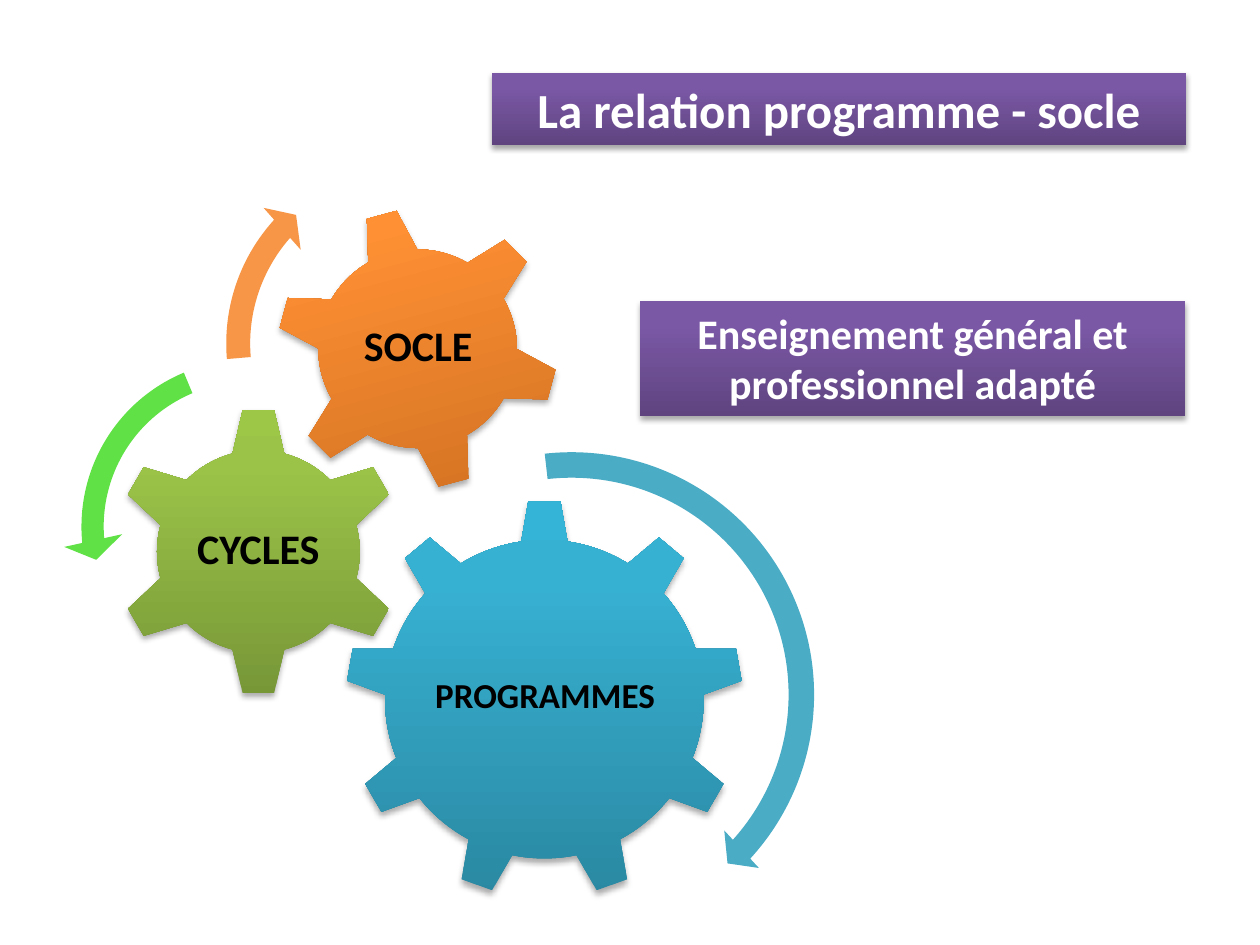
"""Build the slide that relates programmes, cycles and socle as meshing gears."""
from dataclasses import dataclass

from lxml.etree import SubElement
from pptx import Presentation
from pptx.dml.color import RGBColor
from pptx.enum.shapes import MSO_SHAPE as Preset
from pptx.enum.text import MSO_ANCHOR as Anchor, MSO_AUTO_SIZE as AutoSize, PP_ALIGN as Align
from pptx.oxml.ns import qn
from pptx.util import Cm, Pt

COLOURS = {
    "text": "000000", "title": "FFFFFF", "shadow": "000000",
    "blue": "4BACC6", "green": "60E146", "orange": "F79646",
}
GRADIENTS = {
    "blue": ("2A88A2", "37B1D2", "34B4D6"),
    "green": ("779737", "9BC348", "9DC746"),
    "orange": ("CC6E20", "FF9034", "FF9136"),
    "purple": ("5F4480", "7B58A6", "7C57A8"),
}
STOPS = (0, 80, 100)
LABEL_FRAME = {
    "word_wrap": True, "vertical_anchor": Anchor.MIDDLE,
    "margin_left": Cm(0.08), "margin_right": Cm(0.08),
    "margin_top": Cm(0.08), "margin_bottom": Cm(0.08),
}
BANNER_FRAME = {
    "word_wrap": True, "vertical_anchor": Anchor.TOP,
    "auto_size": AutoSize.SHAPE_TO_FIT_TEXT,
}


@dataclass(frozen=True)
class Shadow:
    opacity: int
    blur: float
    distance: float


@dataclass(frozen=True)
class Gear:
    preset: Preset
    colour: str
    left: float
    top: float
    side: float
    label: str
    size: int
    label_box: tuple[float, float, float, float]
    rotation: int = 0


@dataclass(frozen=True)
class Arrow:
    preset: Preset
    colour: str
    left: float
    top: float
    side: float
    bends: tuple[float, ...]


@dataclass(frozen=True)
class Banner:
    text: str
    size: int
    box: tuple[float, float, float, float]


GEAR_SHADOW = Shadow(32, 3.5, 2.2)
BANNER_SHADOW = Shadow(35, 3.1, 1.8)
GEARS = (
    Gear(Preset.GEAR_9, "blue", 6.96, 10.08, 8.03, "PROGRAMMES", 20, (8.59, 11.99, 4.8, 4.14)),
    Gear(Preset.GEAR_6, "green", 2.29, 8.2, 5.84, "CYCLES", 24, (3.76, 9.68, 2.9, 2.87)),
    Gear(Preset.GEAR_6, "orange", 5.56, 4.17, 5.72, "SOCLE", 24, (6.83, 5.41, 3.2, 3.2), 345),
)
ARROWS = (
    Arrow(Preset.CIRCULAR_ARROW, "blue", 6.38, 8.86, 10.29, (0.05, 2.99, 25.37, 158.18, 0.05)),
    Arrow(Preset.LEFT_CIRCULAR_ARROW, "green", 1.27, 6.88, 7.47, (0.06, 4.3, 104.89, 148.38, 0.08)),
    Arrow(Preset.CIRCULAR_ARROW, "orange", 4.24, 2.9, 8.05, (0.06, 3.94, 133.14, 105.08, 0.07)),
)
BANNERS = (
    Banner("La relation programme - socle", 28, (9.91, 1.47, 14, 1.45)),
    Banner("Enseignement général et professionnel adapté", 24, (12.9, 6.07, 11, 2.31)),
)


def set_values(target: object, values: dict) -> None:
    """Set each named attribute on the target."""
    for name, value in values.items():
        setattr(target, name, value)


def add_preset(shapes, preset: Preset, box: tuple):
    """Add a preset shape without line or shadow."""
    shape = shapes.add_shape(preset, *map(Cm, box))
    shape.line.fill.background()
    shape.shadow.inherit = False
    return shape


def add_relief(shape, gradient: str, shadow: Shadow) -> None:
    """Give a shape a vertical gradient and a shadow below."""
    properties = shape._element.spPr
    fill = SubElement(properties, qn("a:gradFill"), rotWithShape="1")
    properties.find(qn("a:prstGeom")).addnext(fill)
    stops = SubElement(fill, qn("a:gsLst"))
    for position, colour in zip(STOPS, GRADIENTS[gradient]):
        stop = SubElement(stops, qn("a:gs"), pos=str(position * 1000))
        SubElement(stop, qn("a:srgbClr"), val=colour)
    SubElement(fill, qn("a:lin"), ang="16200000", scaled="0")
    outer = SubElement(
        properties.find(qn("a:effectLst")), qn("a:outerShdw"),
        blurRad=str(Pt(shadow.blur)), dist=str(Pt(shadow.distance)),
        dir="5400000", rotWithShape="0",
    )
    tint = SubElement(outer, qn("a:srgbClr"), val=COLOURS["shadow"])
    SubElement(tint, qn("a:alpha"), val=str(shadow.opacity * 1000))


def write_text(box, text: str, size: int, colour: str, frame: dict):
    """Write one centred bold paragraph and return it."""
    set_values(box.text_frame, frame)
    para = box.text_frame.paragraphs[0]
    para.alignment = Align.CENTER
    span = para.add_run()
    span.text = text
    set_values(span.font, {"name": "Calibri", "size": Pt(size), "bold": True})
    span.font.color.rgb = RGBColor.from_string(COLOURS[colour])
    return para


def draw_gear(shapes, gear: Gear) -> None:
    """Draw a gear and its upright label."""
    shape = add_preset(shapes, gear.preset, (gear.left, gear.top, gear.side, gear.side))
    shape.rotation = gear.rotation
    add_relief(shape, gear.colour, GEAR_SHADOW)
    box = shapes.add_textbox(*map(Cm, gear.label_box))
    para = write_text(box, gear.label, gear.size, "text", LABEL_FRAME)
    para.line_spacing = 0.9
    after = SubElement(para._p.get_or_add_pPr(), qn("a:spcAft"))
    SubElement(after, qn("a:spcPct"), val="35000")


def draw_arrow(shapes, arrow: Arrow) -> None:
    """Draw a curved arrow showing which way a gear turns."""
    shape = add_preset(shapes, arrow.preset, (arrow.left, arrow.top, arrow.side, arrow.side))
    for index, bend in enumerate(arrow.bends):
        shape.adjustments[index] = bend
    shape.fill.solid()
    shape.fill.fore_color.rgb = RGBColor.from_string(COLOURS[arrow.colour])


def draw_banner(shapes, banner: Banner) -> None:
    """Draw a purple text banner."""
    shape = add_preset(shapes, Preset.RECTANGLE, banner.box)
    add_relief(shape, "purple", BANNER_SHADOW)
    write_text(shape, banner.text, banner.size, "title", BANNER_FRAME)


def main() -> None:
    """Build and save the deck."""
    deck = Presentation()
    set_values(deck, {"slide_width": Cm(25.4), "slide_height": Cm(19.05)})
    page = deck.slides.add_slide(deck.slide_layouts[6])
    mechanism = page.shapes.add_group_shape().shapes
    for gear in GEARS:
        draw_gear(mechanism, gear)
    for arrow in ARROWS:
        draw_arrow(mechanism, arrow)
    for banner in BANNERS:
        draw_banner(page.shapes, banner)
    deck.save("out.pptx")


if __name__ == "__main__":
    main()
